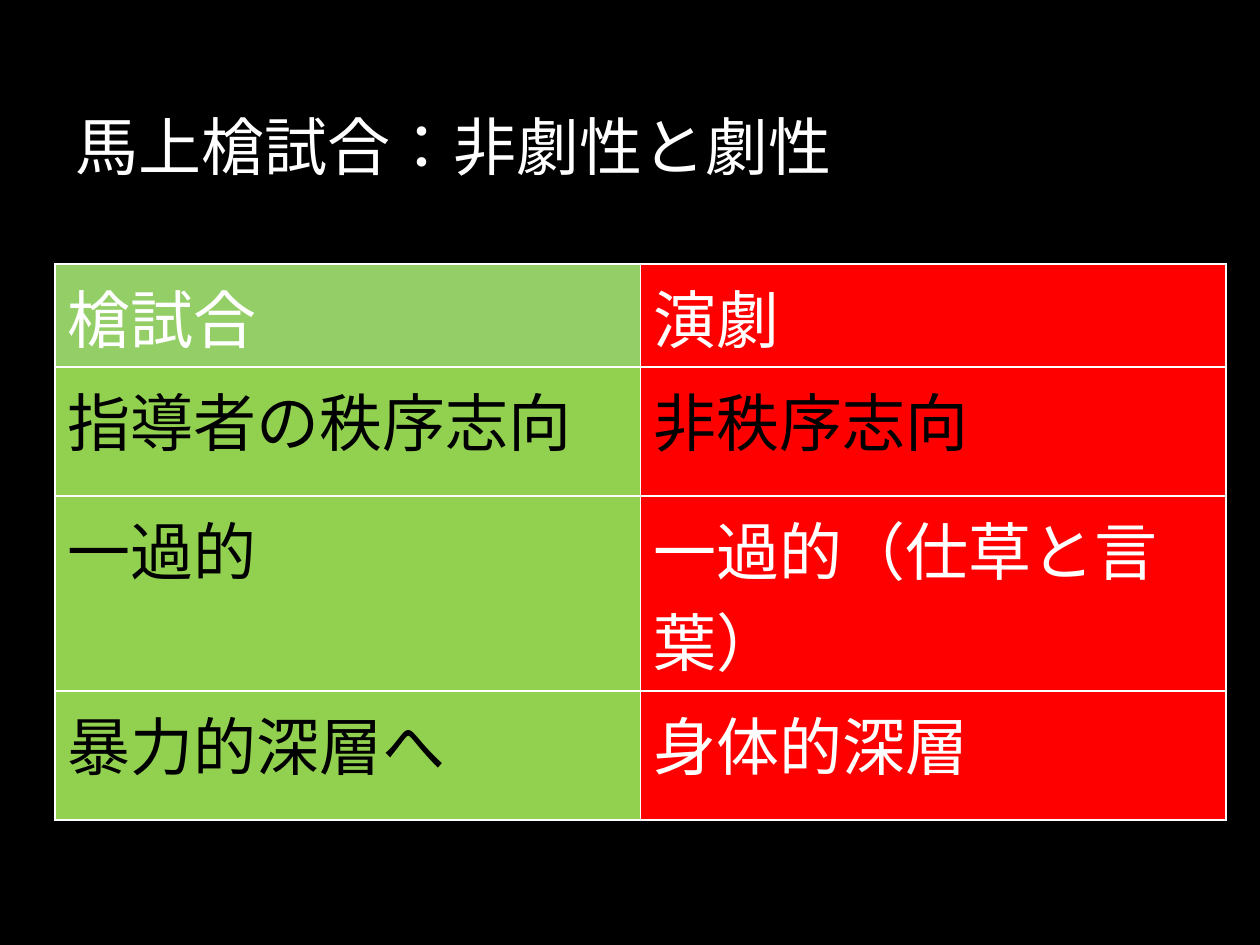
from dataclasses import dataclass

from lxml.etree import SubElement
from pptx import Presentation
from pptx.dml.color import RGBColor
from pptx.enum.lang import MSO_LANGUAGE_ID
from pptx.enum.text import MSO_ANCHOR
from pptx.oxml.ns import qn
from pptx.util import Emu, Pt


@dataclass(frozen=True)
class Theme:
    background: str = "000000"
    light: str = "FFFFFF"
    dark: str = "000000"
    header_green: str = "94CE67"
    green: str = "92D050"
    red: str = "FF0000"
    font: str = "Calibri"
    size: int = 36
    border: int = 1


THEME = Theme()
EMU_PER_PX = 914400 / 126

ROWS = [
    (103, ("槍試合", THEME.light, THEME.header_green), ("演劇", THEME.light, THEME.red)),
    (129, ("指導者の秩序志向", THEME.dark, THEME.green), ("非秩序志向", THEME.dark, THEME.red)),
    (195, ("一過的", THEME.dark, THEME.green), ("一過的（仕草と言葉）", THEME.light, THEME.red)),
    (129, ("暴力的深層へ", THEME.dark, THEME.green), ("身体的深層", THEME.light, THEME.red)),
]


def px(length):
    return Emu(round(length * EMU_PER_PX))


def set_format(target, values):
    for name, value in values.items():
        setattr(target, name, value)


def paint(fill, color):
    fill.solid()
    fill.fore_color.rgb = RGBColor.from_string(color)


def write(frame, text, color):
    span = frame.paragraphs[0].add_run()
    span.text = text
    set_format(span.font, {
        "name": THEME.font,
        "size": Pt(THEME.size),
        "language_id": MSO_LANGUAGE_ID.JAPANESE,
    })
    span.font.color.rgb = RGBColor.from_string(color)


def add_title(page, text, left, top, width, height):
    box = page.shapes.add_textbox(px(left), px(top), px(width), px(height))
    set_format(box.text_frame, {"word_wrap": True, "vertical_anchor": MSO_ANCHOR.MIDDLE})
    write(box.text_frame, text, THEME.light)


def add_borders(cell):
    properties = cell._tc.get_or_add_tcPr()
    for side in ("lnL", "lnR", "lnT", "lnB"):
        line = SubElement(properties, qn(f"a:{side}"), w=str(Pt(THEME.border)))
        fill = SubElement(line, qn("a:solidFill"))
        SubElement(fill, qn("a:srgbClr"), val=THEME.light)


def add_comparison(page, rows, left, top, width):
    columns = len(rows[0]) - 1
    height = sum(row[0] for row in rows)
    table = page.shapes.add_table(
        len(rows), columns, px(left), px(top), px(width), px(height)
    ).table
    for row_index, (row_height, *entries) in enumerate(rows):
        table.rows[row_index].height = px(row_height)
        for column_index, (text, color, fill) in enumerate(entries):
            cell = table.cell(row_index, column_index)
            add_borders(cell)
            paint(cell.fill, fill)
            write(cell.text_frame, text, color)


def main():
    deck = Presentation()
    set_format(deck, {"slide_width": px(1260), "slide_height": px(945)})
    page = deck.slides.add_slide(deck.slide_layouts[6])
    paint(page.background.fill, THEME.background)
    add_title(page, "馬上槍試合：非劇性と劇性", 63, 84, 1071, 123)
    add_comparison(page, ROWS, 55, 264, 1171)
    deck.save("out.pptx")


if __name__ == "__main__":
    main()
